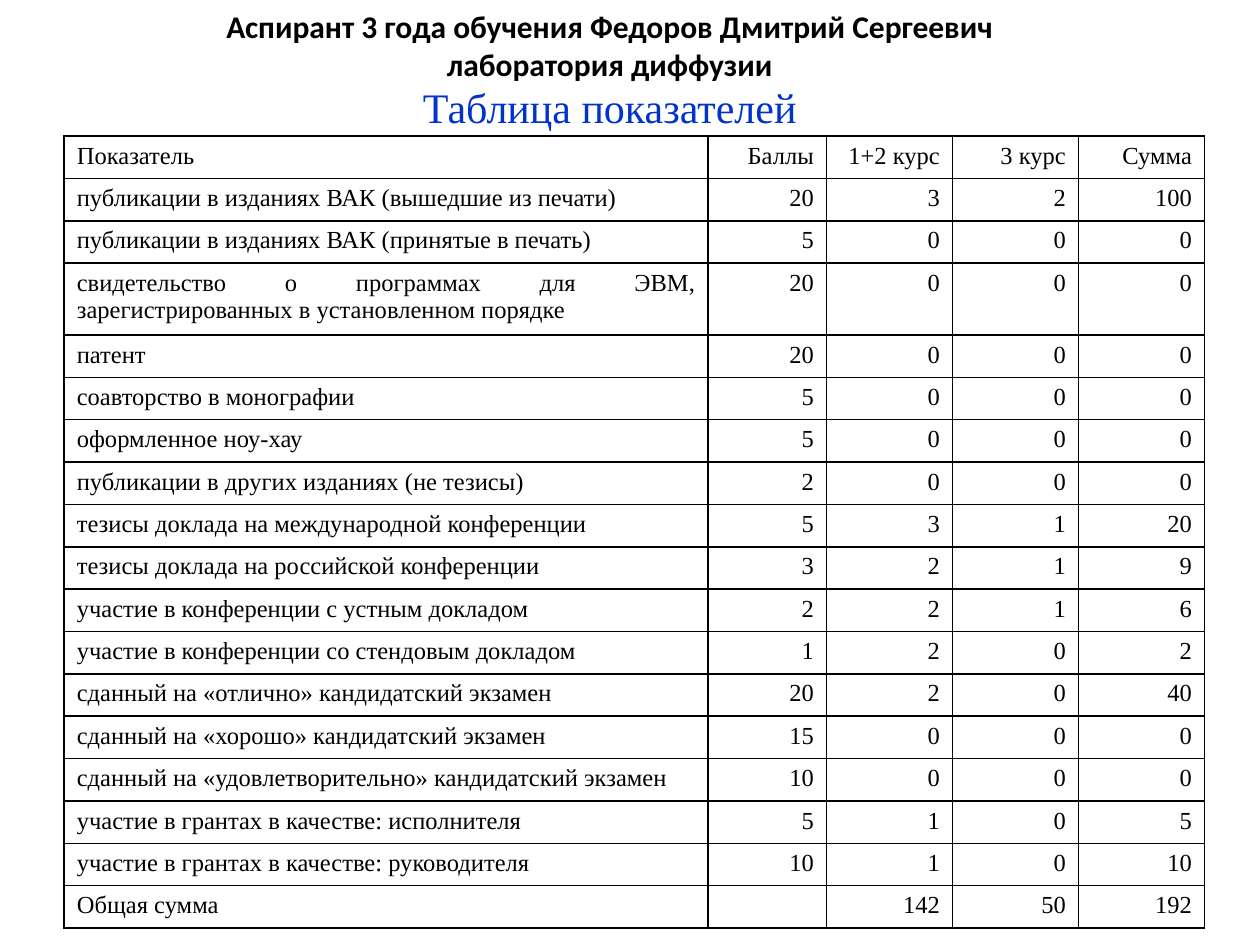
from lxml import etree
from pptx import Presentation
from pptx.dml.color import RGBColor
from pptx.enum import text as t
from pptx.oxml import ns
from pptx.util import Inches, Pt

BLACK = RGBColor(0x00, 0x00, 0x00)
BLUE = RGBColor(0x00, 0x33, 0xCC)
SERIF = "Times New Roman"
CELL_SIZE = Pt(14)

COLUMN_WIDTHS = [5.11, 0.94, 1, 1, 1]
TALL_ROW = 3
TALL_ROW_HEIGHT = 0.57

INDICATORS = [
    ("Показатель", "Баллы", "1+2 курс", "3 курс", "Сумма"),
    ("публикации в изданиях ВАК (вышедшие из печати)", 20, 3, 2, 100),
    ("публикации в изданиях ВАК (принятые в печать)", 5, 0, 0, 0),
    ("свидетельство о программах для ЭВМ, зарегистрированных в установленном порядке",
     20, 0, 0, 0),
    ("патент", 20, 0, 0, 0),
    ("соавторство в монографии", 5, 0, 0, 0),
    ("оформленное ноу-хау", 5, 0, 0, 0),
    ("публикации в других изданиях (не тезисы)", 2, 0, 0, 0),
    ("тезисы доклада на международной конференции", 5, 3, 1, 20),
    ("тезисы доклада на российской конференции", 3, 2, 1, 9),
    ("участие в конференции с устным докладом", 2, 2, 1, 6),
    ("участие в конференции со стендовым докладом", 1, 2, 0, 2),
    ("сданный на «отлично» кандидатский экзамен", 20, 2, 0, 40),
    ("сданный на «хорошо» кандидатский экзамен", 15, 0, 0, 0),
    ("сданный на «удовлетворительно» кандидатский экзамен", 10, 0, 0, 0),
    ("участие в грантах в качестве: исполнителя", 5, 1, 0, 5),
    ("участие в грантах в качестве: руководителя", 10, 1, 0, 10),
    ("Общая сумма", "", 142, 50, 192),
]


def format_runs(paragraph, align, font_name, size, color, bold=False):
    paragraph.alignment = align
    for run in paragraph.runs:
        run.font.name = font_name
        run.font.size = size
        run.font.color.rgb = color
        run.font.bold = bold


def add_heading(slide, box, wording, anchor, font_name, size, color, bold=False):
    heading = slide.shapes.add_textbox(*map(Inches, box))
    frame = heading.text_frame
    frame.word_wrap = True
    frame.vertical_anchor = anchor
    frame.text = wording
    format_runs(frame.paragraphs[0], t.PP_ALIGN.CENTER, font_name, size, color, bold)


def add_borders(cell):
    properties = cell._tc.get_or_add_tcPr()
    for side in ("lnL", "lnR", "lnT", "lnB"):
        line = etree.SubElement(properties, ns.qn(f"a:{side}"), w=str(Pt(1)))
        fill = etree.SubElement(line, ns.qn("a:solidFill"))
        etree.SubElement(fill, ns.qn("a:srgbClr"), val=str(BLACK))


def fill_cell(cell, value, align):
    cell.text = str(value)
    paragraph = cell.text_frame.paragraphs[0]
    format_runs(paragraph, align, SERIF, CELL_SIZE, BLACK)
    if not paragraph.runs:
        # An empty cell keeps the table's text size, so its row does not grow.
        end = etree.SubElement(paragraph._p, ns.qn("a:endParaRPr"))
        end.set("sz", str(CELL_SIZE.centipoints))
    add_borders(cell)
    cell.fill.background()


def add_indicator_table(slide, box):
    height = box[3]
    table = slide.shapes.add_table(
        len(INDICATORS), len(COLUMN_WIDTHS), *map(Inches, box)).table
    table.first_row = False
    table.horz_banding = False
    for column, width in zip(table.columns, COLUMN_WIDTHS):
        column.width = Inches(width)
    row_height = (height - TALL_ROW_HEIGHT) / (len(INDICATORS) - 1)
    for r, indicator in enumerate(INDICATORS):
        table.rows[r].height = Inches(TALL_ROW_HEIGHT if r == TALL_ROW else row_height)
        for c, value in enumerate(indicator):
            align = t.PP_ALIGN.RIGHT if c else t.PP_ALIGN.JUSTIFY
            fill_cell(table.cell(r, c), value, align)


def main():
    deck = Presentation()
    deck.slide_width, deck.slide_height = Inches(10), Inches(7.5)
    slide = deck.slides.add_slide(deck.slide_layouts[6])
    add_heading(slide, (0.59, 0, 8.5, 0.71),
                "Аспирант 3 года обучения Федоров Дмитрий Сергеевич\vлаборатория диффузии",
                t.MSO_ANCHOR.MIDDLE, "Calibri", Pt(18), BLACK, bold=True)
    add_heading(slide, (1.34, 0.6, 7, 0.47), "Таблица показателей",
                t.MSO_ANCHOR.TOP, SERIF, Pt(24), BLUE)
    add_indicator_table(slide, (0.51, 1.08, 9.06, 6.29))
    deck.save("out.pptx")


if __name__ == "__main__":
    main()
